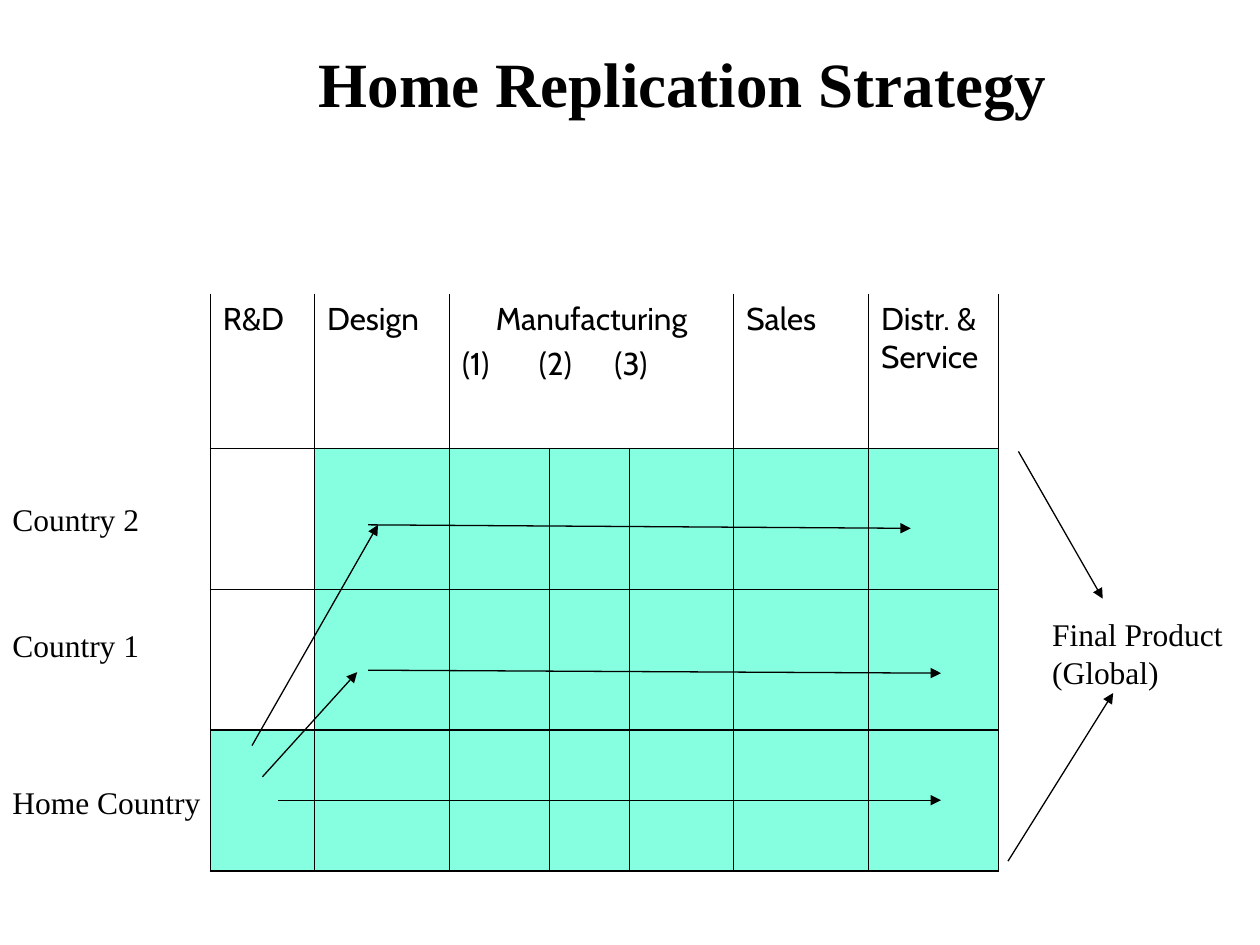
from dataclasses import dataclass
from typing import Any, Sequence

import pptx
import pptx.dml.color
import pptx.enum.shapes
import pptx.enum.text
import pptx.oxml
import pptx.oxml.ns
import pptx.util
from lxml import etree

Cm, Pt = pptx.util.Cm, pptx.util.Pt
PP_ALIGN = pptx.enum.text.PP_ALIGN
ANCHOR = pptx.enum.text.MSO_ANCHOR
qn = pptx.oxml.ns.qn


@dataclass(frozen=True)
class Theme:
    ink: str = "000000"
    paper: str = "FFFFFF"
    mint: str = "85FFE0"
    serif: str = "Times New Roman"
    sans: str = "Cabin"
    title_size: float = 36
    text_size: float = 18
    border: float = 1
    arrow: float = 0.75


@dataclass(frozen=True)
class Label:
    text: str
    left: float
    top: float
    width: float
    height: float
    wrap: bool = True


@dataclass(frozen=True)
class Arrow:
    x1: float
    y1: float
    x2: float
    y2: float


@dataclass(frozen=True)
class Header:
    col: int
    text: str


THEME = Theme()

# All lengths are in centimetres
LABELS = [
    Label("Home Country", 0, 15.67, 4.45, 1.02),
    Label("Country 1", 0, 12.5, 3.07, 1.02, wrap=False),
    Label("Country 2", 0, 9.96, 3.07, 1.02, wrap=False),
    Label("Final Product (Global)", 20.96, 12.28, 4.45, 1.78),
]
ARROWS = [
    Arrow(20.53, 9.1, 22.23, 12.07),    # Country 2 to final product
    Arrow(20.32, 17.36, 22.44, 13.97),  # Home country to final product
    Arrow(7.42, 10.58, 18.36, 10.65),   # Along Country 2
    Arrow(7.42, 13.51, 18.97, 13.57),   # Along Country 1
    Arrow(5.61, 16.13, 18.97, 16.13),   # Along home country
    Arrow(5.08, 15.03, 7.62, 10.58),    # R&D to Country 2
    Arrow(5.29, 15.66, 7.2, 13.55),     # R&D to Country 1
]
HEADERS = [
    Header(0, "R&D"),
    Header(1, "Design"),
    Header(2, "Manufacturing"),
    Header(5, "Sales"),
    Header(6, "Distr. & Service"),
]
TABLE_LEFT, TABLE_TOP = 4.24, 5.92
COLUMNS = [2.1, 2.72, 2.02, 1.61, 2.1, 2.72, 2.62]
ROWS = [3.12] + [2.84] * 3
PLANT_TABS = [1.55, 3.07]


def rgb(value: str) -> pptx.dml.color.RGBColor:
    return pptx.dml.color.RGBColor.from_string(value)


def write(p: Any, text: str, *, font: str = THEME.serif, size: float = THEME.text_size,
          bold: bool = False, align: Any = PP_ALIGN.LEFT, before: float = 0,
          line: float = 1.0, tabs: Sequence[float] = ()) -> None:
    """Put formatted text into a paragraph."""
    p.alignment, p.space_before, p.line_spacing = align, Pt(before), line
    if tabs:
        tab_list = etree.SubElement(p._p.get_or_add_pPr(), qn("a:tabLst"))
        for pos in tabs:
            etree.SubElement(tab_list, qn("a:tab"), pos=str(int(Cm(pos))), algn="l")
    r = p.add_run()
    r.text = text
    r.font.name, r.font.size, r.font.bold = font, Pt(size), bold
    r.font.color.rgb = rgb(THEME.ink)


def add_title(s: Any, text: str) -> None:
    sp = s.shapes.title
    sp.left, sp.top, sp.width, sp.height = Cm(6.17), Cm(0.81), Cm(15.42), Cm(1.9)
    tf = sp.text_frame
    tf.vertical_anchor = ANCHOR.MIDDLE
    write(tf.paragraphs[0], text, size=THEME.title_size, bold=True, line=0.9)


def add_label(s: Any, label: Label) -> None:
    sp = s.shapes.add_textbox(Cm(label.left), Cm(label.top), Cm(label.width), Cm(label.height))
    tf = sp.text_frame
    tf.word_wrap = label.wrap
    tf.auto_size = pptx.enum.text.MSO_AUTO_SIZE.SHAPE_TO_FIT_TEXT
    write(tf.paragraphs[0], label.text)


def add_arrow(s: Any, arrow: Arrow) -> None:
    c = s.shapes.add_connector(pptx.enum.shapes.MSO_CONNECTOR.STRAIGHT,
                               Cm(arrow.x1), Cm(arrow.y1), Cm(arrow.x2), Cm(arrow.y2))
    c.line.color.rgb = rgb(THEME.ink)
    c.line.width = Pt(THEME.arrow)
    etree.SubElement(c.line._get_or_add_ln(), qn("a:tailEnd"), type="triangle")
    etree.SubElement(c._element.spPr, qn("a:effectLst"))


def set_borders(cell: Any, top: bool) -> None:
    tc_pr = cell._tc.get_or_add_tcPr()
    for side in "LRTB":
        ln = etree.SubElement(tc_pr, qn(f"a:ln{side}"), w=str(int(Pt(THEME.border))))
        if side == "T" and not top:
            etree.SubElement(ln, qn("a:noFill"))
        else:
            fill = etree.SubElement(ln, qn("a:solidFill"))
            etree.SubElement(fill, qn("a:srgbClr"), val=THEME.ink)


def add_value_chain(s: Any) -> None:
    frame = s.shapes.add_table(len(ROWS), len(COLUMNS), Cm(TABLE_LEFT), Cm(TABLE_TOP),
                               Cm(sum(COLUMNS)), Cm(sum(ROWS)))
    table = frame.table
    table.first_row = table.horz_banding = False
    for column, width in zip(table.columns, COLUMNS):
        column.width = Cm(width)

    # Country rows are tinted, except R&D abroad
    for i, height in enumerate(ROWS):
        table.rows[i].height = Cm(height)
        for j in range(len(COLUMNS)):
            cell = table.cell(i, j)
            set_borders(cell, top=i > 0)
            if i == 0:
                cell.fill.background()
            else:
                cell.fill.solid()
                tinted = j > 0 or i == len(ROWS) - 1
                cell.fill.fore_color.rgb = rgb(THEME.mint if tinted else THEME.paper)

    # Activity headings, with three plants under manufacturing
    table.cell(0, 2).merge(table.cell(0, 4))
    for header in HEADERS:
        cell = table.cell(0, header.col)
        tf = cell.text_frame
        align = PP_ALIGN.CENTER if cell.is_merge_origin else PP_ALIGN.LEFT
        write(tf.paragraphs[0], header.text, font=THEME.sans, align=align)
        if cell.is_merge_origin:
            write(tf.add_paragraph(), "(1)\t(2)\t(3)", font=THEME.sans,
                  before=3.6, tabs=PLANT_TABS)


def main() -> None:
    prs = pptx.Presentation()
    prs.slide_width, prs.slide_height = Cm(25.4), Cm(19.05)
    s = prs.slides.add_slide(prs.slide_layouts[5])
    add_title(s, "Home Replication Strategy")
    add_value_chain(s)
    for label in LABELS:
        add_label(s, label)
    for arrow in ARROWS:
        add_arrow(s, arrow)
    prs.save("out.pptx")


if __name__ == "__main__":
    main()
